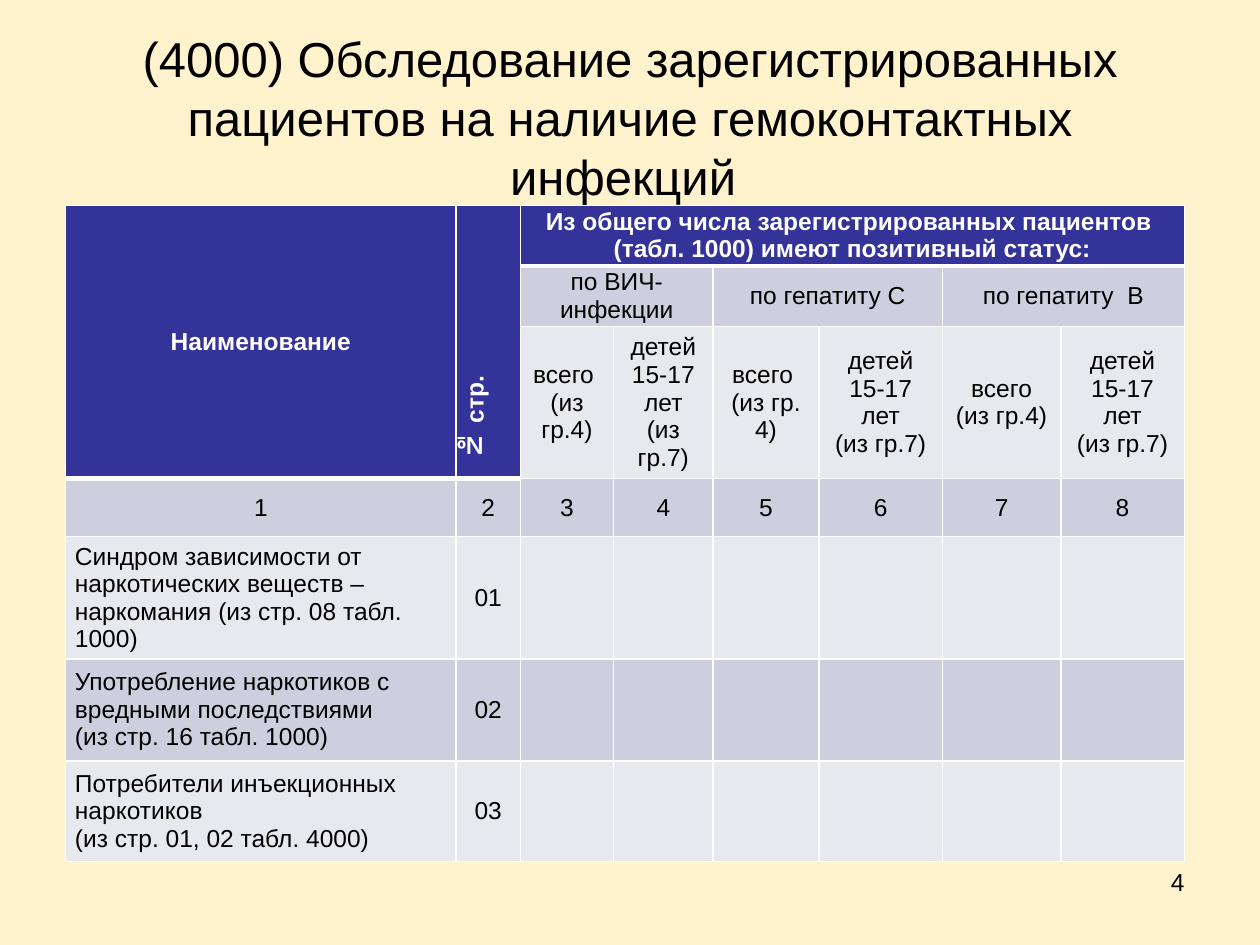
from dataclasses import dataclass

from lxml import etree
from pptx import Presentation
from pptx.dml.color import RGBColor
from pptx.enum.text import MSO_ANCHOR, PP_ALIGN
from pptx.oxml.ns import qn
from pptx.util import Pt

LEFT, CENTER, RIGHT = PP_ALIGN.LEFT, PP_ALIGN.CENTER, PP_ALIGN.RIGHT
TOP, MIDDLE = MSO_ANCHOR.TOP, MSO_ANCHOR.MIDDLE


@dataclass(frozen=True)
class Theme:
    font: str = "Arial"
    background: str = "FFF3CD"
    text: str = "000000"
    header: str = "333399"
    header_text: str = "FFFFFF"
    band_dark: str = "CECEDE"
    band_light: str = "E8E8EF"
    border: str = "FFFFFF"
    title_size: float = 28
    body_size: float = 14
    thin: float = 1
    thick: float = 3


@dataclass(frozen=True)
class Entry:
    row: int
    col: int
    paragraphs: tuple[str, ...]
    rows: int = 1
    cols: int = 1
    align: PP_ALIGN = CENTER
    vertical: bool = False


@dataclass(frozen=True)
class Caption:
    text: str
    box: tuple[float, float, float, float]
    size: float
    align: PP_ALIGN
    anchor: MSO_ANCHOR


THEME = Theme()

# Table geometry, in points
TABLE_LEFT, TABLE_TOP = 37.44, 117.36
COLUMN_WIDTHS = (223.2, 36.72, 53.28, 56.88, 60.48, 70.56, 67.68, 70.56)
ROW_HEIGHTS = (34.56, 34.56, 87.12, 33.12, 69.84, 58.32, 57.6)
CELL_INSET = 5.4
VERTICAL_INDENT = 5.65

# Wording
CHILDREN = ("детей 15-17 лет", "(из гр.7)")
HEADINGS = (
    Entry(0, 0, ("Наименование",), rows=3),
    Entry(0, 1, ("№ стр.",), rows=3, align=LEFT, vertical=True),
    Entry(0, 2, ("Из общего числа зарегистрированных пациентов  "
                 "(табл. 1000) имеют позитивный статус:",), cols=6),
)
INFECTIONS = (
    ("по ВИЧ-инфекции", ("всего ", "(из гр.4)")),
    ("по гепатиту C", ("всего ", "(из гр. 4)")),
    ("по гепатиту  B", ("всего", "(из гр.4)")),
)
PATIENT_GROUPS = (
    ("Синдром зависимости от наркотических веществ – "
     "наркомания (из стр. 08 табл. 1000)",),
    ("Употребление наркотиков с вредными последствиями",
     "(из стр. 16 табл. 1000)"),
    ("Потребители инъекционных наркотиков \n(из стр. 01, 02 табл. 4000)",),
)
CAPTIONS = (
    Caption("(4000) Обследование зарегистрированных пациентов "
            "на наличие гемоконтактных инфекций ",
            (36, 21.6, 648, 90), THEME.title_size, CENTER, MIDDLE),
    Caption("4", (516.24, 491.76, 167.76, 37.44), THEME.body_size, RIGHT, TOP),
)


def table_entries() -> list[Entry]:
    entries = list(HEADINGS)
    for index, (infection, total) in enumerate(INFECTIONS):
        col = 2 + 2 * index
        entries += [Entry(1, col, (infection,), cols=2),
                    Entry(2, col, total), Entry(2, col + 1, CHILDREN)]
    entries += [Entry(3, col, (str(col + 1),)) for col in range(len(COLUMN_WIDTHS))]
    for number, group in enumerate(PATIENT_GROUPS, start=1):
        entries += [Entry(3 + number, 0, group, align=LEFT),
                    Entry(3 + number, 1, (f"{number:02d}",))]
    return entries


def header_end(col: int) -> int:
    """Index of the first row below the dark header in a column."""
    return 3 if col < 2 else 1


def write(frame, paragraphs: tuple[str, ...], size: float, color: str,
          align: PP_ALIGN, bold: bool = False) -> None:
    for index, wording in enumerate(paragraphs):
        paragraph = frame.add_paragraph() if index else frame.paragraphs[0]
        paragraph.alignment = align
        for line_index, line in enumerate(wording.split("\n")):
            if line_index:
                paragraph.add_line_break()
            run = paragraph.add_run()
            run.text = line
            run.font.name = THEME.font
            run.font.size = Pt(size)
            run.font.bold = bold
            run.font.color.rgb = RGBColor.from_string(color)


def add_caption(slide, caption: Caption) -> None:
    box = slide.shapes.add_textbox(*(Pt(length) for length in caption.box))
    frame = box.text_frame
    frame.word_wrap = True
    frame.vertical_anchor = caption.anchor
    write(frame, (caption.text,), caption.size, THEME.text, caption.align)


def set_borders(cell, top: float, bottom: float) -> None:
    properties = cell._tc.get_or_add_tcPr()
    widths = {"a:lnL": THEME.thin, "a:lnR": THEME.thin, "a:lnT": top, "a:lnB": bottom}
    for tag, width in widths.items():
        line = etree.SubElement(properties, qn(tag), w=str(Pt(width)))
        fill = etree.SubElement(line, qn("a:solidFill"))
        etree.SubElement(fill, qn("a:srgbClr"), val=THEME.border)


def style_cell(cell, row: int, col: int) -> None:
    end = header_end(col)
    last = row + (cell.span_height if cell.is_merge_origin else 1)
    set_borders(cell, THEME.thick if row == end else THEME.thin,
                THEME.thick if last == end else THEME.thin)
    band = THEME.band_dark if row % 2 else THEME.band_light
    cell.fill.solid()
    cell.fill.fore_color.rgb = RGBColor.from_string(THEME.header if row < end else band)
    cell.margin_left = cell.margin_right = Pt(CELL_INSET)
    cell.margin_top = cell.margin_bottom = 0
    cell.vertical_anchor = MIDDLE


def fill_cell(cell, entry: Entry) -> None:
    heading = entry.row < header_end(entry.col)
    write(cell.text_frame, entry.paragraphs, THEME.body_size,
          THEME.header_text if heading else THEME.text, entry.align, heading)
    if entry.vertical:
        cell._tc.get_or_add_tcPr().set("vert", "vert270")
        paragraph = cell.text_frame.paragraphs[0]
        paragraph._p.get_or_add_pPr().set("marL", str(Pt(VERTICAL_INDENT)))


def add_status_table(slide) -> None:
    table = slide.shapes.add_table(
        len(ROW_HEIGHTS), len(COLUMN_WIDTHS), Pt(TABLE_LEFT), Pt(TABLE_TOP),
        Pt(sum(COLUMN_WIDTHS)), Pt(sum(ROW_HEIGHTS))).table
    table.first_row = table.horz_banding = False
    for column, width in zip(table.columns, COLUMN_WIDTHS):
        column.width = Pt(width)
    for table_row, height in zip(table.rows, ROW_HEIGHTS):
        table_row.height = Pt(height)

    entries = table_entries()
    for entry in entries:
        if entry.rows * entry.cols > 1:
            table.cell(entry.row, entry.col).merge(
                table.cell(entry.row + entry.rows - 1, entry.col + entry.cols - 1))
    for row in range(len(ROW_HEIGHTS)):
        for col in range(len(COLUMN_WIDTHS)):
            style_cell(table.cell(row, col), row, col)
    for entry in entries:
        fill_cell(table.cell(entry.row, entry.col), entry)


def main() -> None:
    presentation = Presentation()
    presentation.slide_width, presentation.slide_height = Pt(720), Pt(540)
    slide = presentation.slides.add_slide(presentation.slide_layouts[6])
    slide.background.fill.solid()
    slide.background.fill.fore_color.rgb = RGBColor.from_string(THEME.background)

    # Title and page number around the table
    title, page_number = CAPTIONS
    add_caption(slide, title)
    add_status_table(slide)
    add_caption(slide, page_number)
    presentation.save("out.pptx")


if __name__ == "__main__":
    main()
